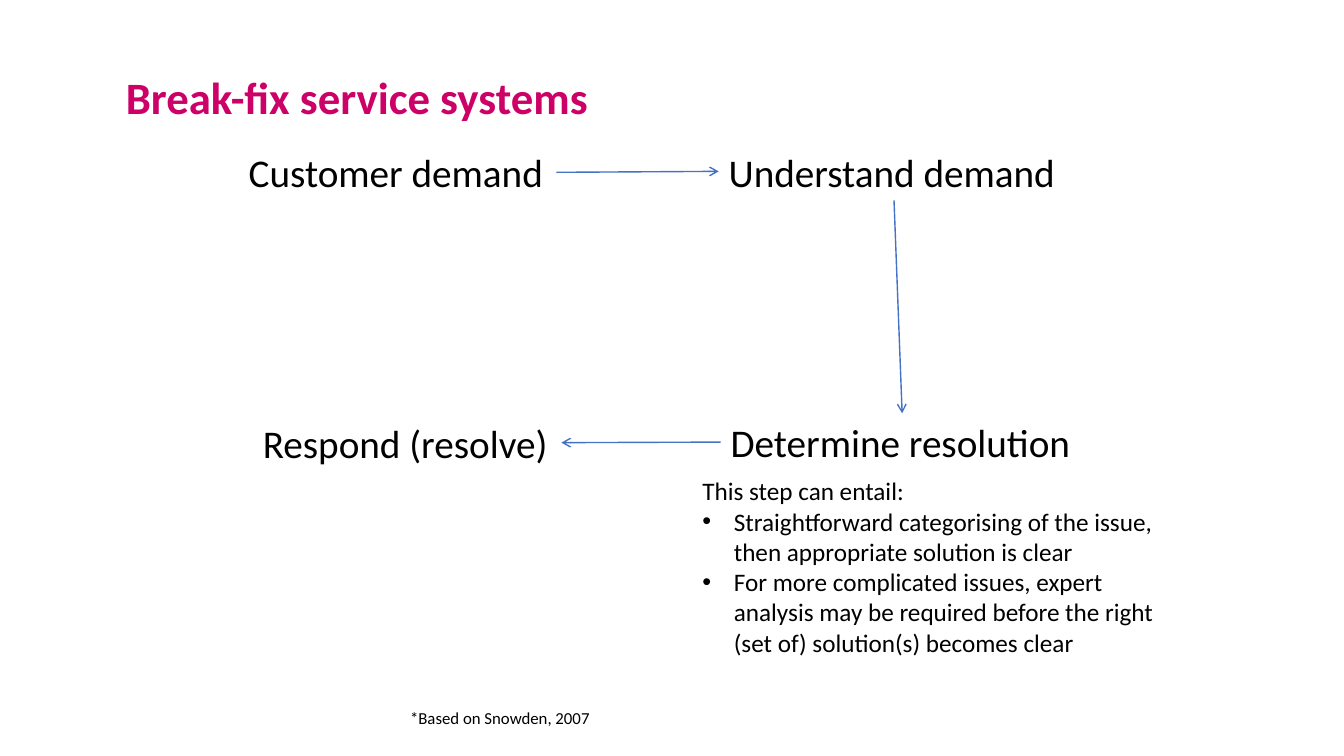
from lxml import etree
from pptx import Presentation
from pptx.dml.color import RGBColor
from pptx.enum.shapes import MSO_CONNECTOR
from pptx.enum.text import MSO_ANCHOR
from pptx.oxml.ns import qn
from pptx.util import Pt

STRAIGHT = MSO_CONNECTOR.STRAIGHT
TOP, MIDDLE = MSO_ANCHOR.TOP, MSO_ANCHOR.MIDDLE
PINK = RGBColor(0xCC, 0x00, 0x66)
BLACK = RGBColor(0x00, 0x00, 0x00)
BLUE = RGBColor(0x44, 0x72, 0xC4)
FONT = "Calibri"
LABEL_HEIGHT = 41

STEPS = [
    ("Customer demand", 0, 0, 226.8),
    ("Understand demand", 342.8, 0, 250.6),
    ("Determine resolution", 344.2, 193, 259.9),
    ("Respond (resolve)", 10.1, 193.6, 220.3),
]
ARROWS = [
    (226.8, 20.9, 342.8, 20.2),
    (468, 41, 473.8, 193),
    (344.2, 213.6, 230.4, 214),
]
ENTAILS = [
    "Straightforward categorising of the issue, then appropriate solution is clear",
    "For more complicated issues, expert analysis may be required "
    "before the right (set of) solution(s) becomes clear",
]


def add_frame(s, x, y, w, h, wrap=False, anchor=TOP):
    tf = s.shapes.add_textbox(Pt(x), Pt(y), Pt(w), Pt(h)).text_frame
    tf.word_wrap = wrap
    tf.vertical_anchor = anchor
    return tf


def add_run(p, text, size, color=BLACK, bold=False):
    r = p.add_run()
    r.text = text
    r.font.name = FONT
    r.font.size = Pt(size)
    r.font.bold = bold
    r.font.color.rgb = color


def add_bullet(p, indent):
    pPr = p._p.get_or_add_pPr()
    pPr.set("marL", str(Pt(indent)))
    pPr.set("indent", str(-Pt(indent)))
    etree.SubElement(pPr, qn("a:buFont")).set("typeface", "Arial")
    etree.SubElement(pPr, qn("a:buChar")).set("char", "•")


def add_arrow(s, x1, y1, x2, y2):
    line = s.shapes.add_connector(STRAIGHT, Pt(x1), Pt(y1), Pt(x2), Pt(y2))
    line.line.color.rgb = BLUE
    line.line.width = Pt(1)
    etree.SubElement(line.line._get_or_add_ln(), qn("a:tailEnd")).set("type", "arrow")
    etree.SubElement(line._element.spPr, qn("a:effectLst"))


def add_title(s, x, y, w, h):
    p = add_frame(s, x, y, w, h, True, MIDDLE).paragraphs[0]
    p.line_spacing = 0.9
    add_run(p, "Break-fix service systems", 32, PINK, True)


def add_cycle(s, x, y):
    for text, dx, dy, w in STEPS:
        tf = add_frame(s, x + dx, y + dy, w, LABEL_HEIGHT)
        add_run(tf.paragraphs[0], text, 28)
    for x1, y1, x2, y2 in ARROWS:
        add_arrow(s, x + x1, y + y1, x + x2, y + y2)


def add_details(s, x, y, w, h):
    tf = add_frame(s, x, y, w, h, True)
    add_run(tf.paragraphs[0], "This step can entail:", 18)
    for text in ENTAILS:
        p = tf.add_paragraph()
        add_bullet(p, 22.5)
        add_run(p, text, 18)


def add_footnote(s, x, y, w, h):
    add_run(add_frame(s, x, y, w, h).paragraphs[0], "*Based on Snowden, 2007", 12)


def main():
    prs = Presentation()
    prs.slide_width, prs.slide_height = Pt(960), Pt(540)
    s = prs.slides.add_slide(prs.slide_layouts[6])
    add_title(s, 82.8, 43.2, 794.9, 56.9)
    add_cycle(s, 170.6, 102.2)
    add_details(s, 494.6, 336.2, 356.4, 138.2)
    add_footnote(s, 285.8, 501.8, 147.6, 21.6)
    prs.save("out.pptx")


if __name__ == "__main__":
    main()
